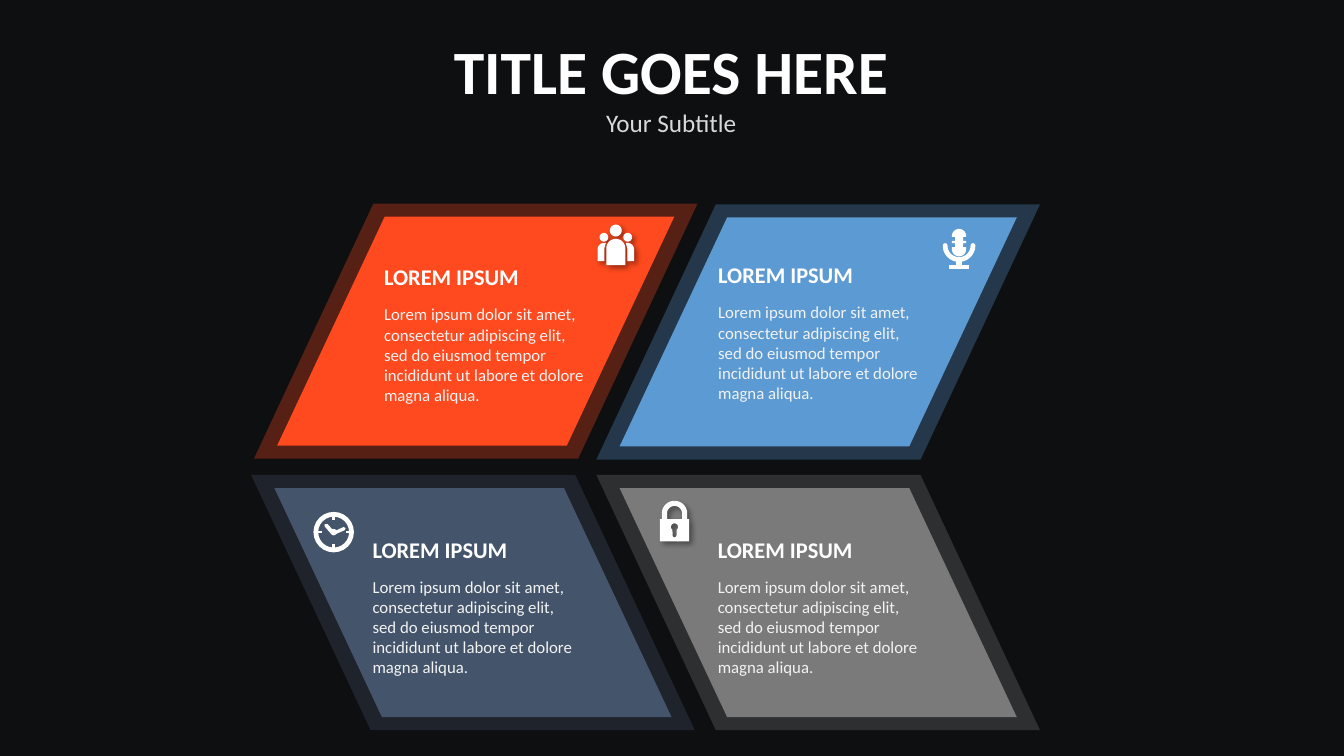
from dataclasses import dataclass
from math import cos, radians, sin

from lxml.etree import SubElement
from pptx import Presentation
from pptx.dml.color import RGBColor
from pptx.enum.text import MSO_AUTO_SIZE as AutoSize, PP_ALIGN as Align
from pptx.oxml.ns import qn
from pptx.util import Cm, Pt

BACKGROUND = RGBColor(0x0E, 0x0F, 0x11)
WHITE = RGBColor(0xFF, 0xFF, 0xFF)
BODY_TEXT = RGBColor(0xF2, 0xF2, 0xF2)
SUBTITLE = RGBColor(0xD9, 0xD9, 0xD9)
ORANGE = RGBColor(0xFE, 0x4A, 0x1E)
BLUE = RGBColor(0x5C, 0x9A, 0xD3)
SLATE = RGBColor(0x44, 0x54, 0x6B)
GRAY = RGBColor(0x7A, 0x7A, 0x7A)

FONT = "Calibri"
HEADING = "LOREM IPSUM"
BODY = ("Lorem ipsum dolor sit amet, consectetur adipiscing elit, sed do eiusmod "
        "tempor incididunt ut labore et dolore magna aliqua.")

Points = list[tuple[float, float]]
Part = list[Points]  # contours of one shape; inner contours are holes

# Panel geometry in centimetres: the rim and the face share a centre
RIM_W, RIM_H, RIM_SLANT = 11.18, 6.43, 3.01
FACE_W, FACE_H, FACE_SLANT = 10.01, 5.77, 2.71


@dataclass
class Panel:
    color: RGBColor
    left: float
    top: float
    leans_right: bool
    text_left: float
    text_top: float
    icon: list[Part]
    icon_x: float
    icon_y: float
    icon_shadow: bool = False


# Outline helpers
def arc(cx: float, cy: float, r: float, start: int = 0, end: int = 360) -> Points:
    steps = 24
    angles = [radians(start + (end - start) * i / steps) for i in range(steps + 1)]
    return [(cx + r * cos(a), cy + r * sin(a)) for a in angles]


def box(x1: float, y1: float, x2: float, y2: float) -> Points:
    return [(x1, y1), (x2, y1), (x2, y2), (x1, y2)]


def mirror(points: Points, axis: float = 0) -> Points:
    return [(2 * axis - x, y) for x, y in points]


def slanted(x: float, y: float, w: float, h: float, slant: float, right: bool) -> Points:
    top, bottom = (slant, 0) if right else (0, slant)
    return [(x + top, y), (x + top + w - slant, y),
            (x + bottom + w - slant, y + h), (x + bottom, y + h)]


# Icons, in centimetres from their own anchor point
def people_icon() -> list[Part]:
    mid = 0.46
    side_head = arc(0.16, 0.32, 0.11)
    side_body = [(0.17, 0.92), (0, 0.92), *arc(0.17, 0.63, 0.17, 180, 270),
                 (0.21, 0.46), (0.17, 0.6)]
    body = [(0.22, 1.02), *arc(mid, 0.6, 0.24, 180, 360), (0.7, 1.02)]
    return [[arc(mid, 0.15, 0.15), body, side_head, side_body,
             mirror(side_head, mid), mirror(side_body, mid)]]


def mic_icon() -> list[Part]:
    cradle = [*arc(0, 0.42, 0.41, 0, 180), *arc(-0.35, 0.42, 0.06, 180, 360),
              *arc(0, 0.42, 0.29, 180, 0), *arc(0.35, 0.42, 0.06, 180, 360)]
    notches = [(0.18, 0.2), (0.1, 0.2), (0.1, 0.3), (0.18, 0.3),
               (0.18, 0.36), (0.1, 0.36), (0.1, 0.46), (0.18, 0.46)]
    capsule = [*arc(0, 0.18, 0.18, 180, 360), *notches,
               *arc(0, 0.51, 0.18, 0, 180), *mirror(notches[::-1])]
    return [[cradle], [capsule], [box(-0.08, 0.8, 0.08, 0.93)],
            [box(-0.25, 0.91, 0.25, 1.02)]]


def clock_icon() -> list[Part]:
    hour = [(0, -0.03), (-0.08, 0.03), (-0.23, -0.15), (-0.23, -0.2), (-0.15, -0.2)]
    minute = [(0.05, 0.05), (0.03, -0.03), (0.25, -0.13), (0.3, -0.1), (0.28, -0.05)]
    right = box(0.3, -0.03, 0.45, 0.03)
    bottom = [(y, x) for x, y in right]
    top = [(x, -y) for x, y in bottom]
    ticks = [[right], [mirror(right)], [bottom], [top]]
    return [[arc(0, 0, 0.51), arc(0, 0, 0.39)], [hour], [minute],
            [arc(0, 0, 0.08)], *ticks]


def lock_icon() -> list[Part]:
    mid = 0.37
    outline = [(0, 1.02), (0, 0.46), (0.05, 0.46), *arc(mid, 0.32, 0.32, 180, 360),
               (0.69, 0.46), (0.74, 0.46), (0.74, 1.02)]
    opening = [(0.18, 0.46), *arc(mid, 0.32, 0.19, 180, 360), (0.56, 0.46)]
    keyhole = [*arc(mid, 0.66, 0.09, 125, 415), *arc(mid, 0.87, 0.05, 0, 180)]
    return [[outline, opening, keyhole]]


# Drawing
def draw_outline(shapes, part: Part, color: RGBColor, x: float = 0, y: float = 0,
                 alpha: int = 100, shadow: bool = False) -> None:
    contours = [[(Cm(x + px), Cm(y + py)) for px, py in c] for c in part]
    builder = shapes.build_freeform(*contours[0][0])
    for i, contour in enumerate(contours):
        if i:
            builder.move_to(*contour[0])
        builder.add_line_segments(contour[1:], close=True)
    sp = builder.convert_to_shape()
    sp.fill.solid()
    sp.fill.fore_color.rgb = color
    sp.line.fill.background()
    sp.shadow.inherit = False
    if alpha < 100:
        clr = sp.fill._xPr.find(qn("a:solidFill"))[0]
        SubElement(clr, qn("a:alpha"), val=str(alpha * 1000))
    if shadow:
        effects = sp._element.spPr.find(qn("a:effectLst"))
        outer = SubElement(effects, qn("a:outerShdw"), blurRad=str(Pt(4)),
                           dist=str(Pt(3)), dir="2700000", algn="tl", rotWithShape="0")
        clr = SubElement(outer, qn("a:srgbClr"), val="000000")
        SubElement(clr, qn("a:alpha"), val="40000")


def write(p, text: str, *, size: float, color: RGBColor, bold: bool = False,
          align: Align = Align.LEFT, before: float = 0) -> None:
    p.alignment = align
    if before:
        p.space_before = Pt(before)
    r = p.add_run()
    r.text = text
    r.font.name, r.font.size, r.font.bold = FONT, Pt(size), bold
    r.font.color.rgb = color


def add_text_frame(slide, x: float, y: float, w: float, h: float):
    tf = slide.shapes.add_textbox(Cm(x), Cm(y), Cm(w), Cm(h)).text_frame
    tf.word_wrap = True
    tf.auto_size = AutoSize.SHAPE_TO_FIT_TEXT
    return tf


def draw_panel(slide, panel: Panel) -> None:
    frame = slide.shapes.add_group_shape().shapes
    rim = slanted(panel.left, panel.top, RIM_W, RIM_H, RIM_SLANT, panel.leans_right)
    face = slanted(panel.left + (RIM_W - FACE_W) / 2, panel.top + (RIM_H - FACE_H) / 2,
                   FACE_W, FACE_H, FACE_SLANT, panel.leans_right)
    draw_outline(frame, [rim], panel.color, alpha=30)
    draw_outline(frame, [face], panel.color)

    icon = slide.shapes
    if len(panel.icon) > 1:
        icon = slide.shapes.add_group_shape().shapes
    for part in panel.icon:
        draw_outline(icon, part, WHITE, panel.icon_x, panel.icon_y,
                     shadow=panel.icon_shadow)

    tf = add_text_frame(slide, panel.text_left, panel.text_top, 5.08, 3.58)
    tf.margin_left = tf.margin_right = tf.margin_top = tf.margin_bottom = 0
    write(tf.paragraphs[0], HEADING, size=16, color=WHITE, bold=True)
    write(tf.add_paragraph(), BODY, size=12, color=BODY_TEXT, before=9.8)


def main() -> None:
    prs = Presentation()
    prs.slide_width, prs.slide_height = Cm(33.87), Cm(19.05)
    slide = prs.slides.add_slide(prs.slide_layouts[6])
    slide.background.fill.solid()
    slide.background.fill.fore_color.rgb = BACKGROUND

    # Four panels around the centre
    panels = [
        Panel(ORANGE, 6.4, 5.13, True, 9.68, 6.64, people_icon(), 15.06, 5.66, True),
        Panel(BLUE, 15.03, 5.15, True, 18.1, 6.59, mic_icon(), 24.17, 5.77),
        Panel(SLATE, 6.33, 11.97, False, 9.39, 13.5, clock_icon(), 8.41, 13.41),
        Panel(GRAY, 15.03, 11.97, False, 18.09, 13.5, lock_icon(), 16.63, 12.62, True),
    ]
    for panel in panels:
        draw_panel(slide, panel)

    # Title and subtitle
    tf = add_text_frame(slide, 9.27, 0.71, 15.29, 2.9)
    write(tf.paragraphs[0], "TITLE GOES HERE", size=44, color=WHITE, bold=True,
          align=Align.CENTER)
    write(tf.add_paragraph(), "Your Subtitle", size=18, color=SUBTITLE,
          align=Align.CENTER)

    prs.save("out.pptx")


if __name__ == "__main__":
    main()
